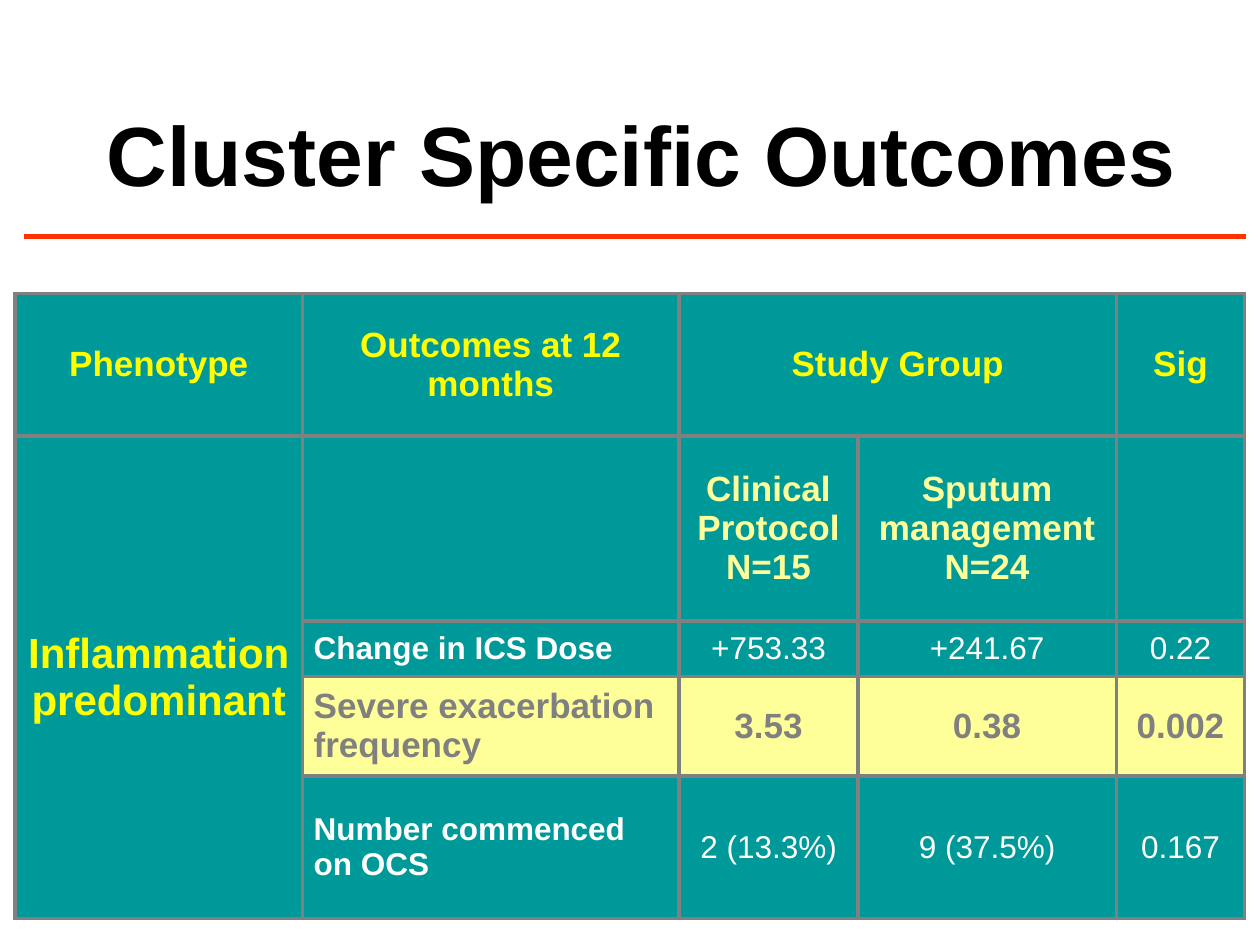
"""Build the Cluster Specific Outcomes slide."""
from lxml import etree
from pptx import Presentation
from pptx.dml.color import RGBColor
from pptx.enum.shapes import MSO_CONNECTOR
from pptx.enum.text import MSO_ANCHOR, PP_ALIGN
from pptx.oxml.ns import qn
from pptx.util import Inches, Pt

CENTER, LEFT = PP_ALIGN.CENTER, PP_ALIGN.LEFT
MIDDLE = MSO_ANCHOR.MIDDLE
STRAIGHT = MSO_CONNECTOR.STRAIGHT

FONT = "Arial"
TEAL, CREAM, YELLOW, GREY, WHITE = "009999", "FFFF99", "FFFF00", "808080", "FFFFFF"
TITLE = "Cluster Specific Outcomes"
COLS = [2.28, 2.99, 1.42, 2.05, 1.02]
ROWS = [1.13, 1.47, 0.44, 0.79, 1.13]
CELLS = [
    ["Phenotype", "Outcomes at 12 months", "Study Group", "", "Sig"],
    ["Inflammation predominant", "", "Clinical Protocol\nN=15", "Sputum management\nN=24", ""],
    ["", "Change in ICS Dose", "+753.33", "+241.67", "0.22"],
    ["", "Severe exacerbation frequency", "3.53", "0.38", "0.002"],
    ["", "Number commenced on OCS", "2 (13.3%)", "9 (37.5%)", "0.167"],
]
MERGES = [((0, 2), (0, 3)), ((1, 0), (4, 0))]
PLAIN_ROW = (18, WHITE, False, TEAL)
ROW_STYLES = [
    (20, YELLOW, True, TEAL),
    (20, CREAM, True, TEAL),
    PLAIN_ROW,
    (20, GREY, True, CREAM),
    PLAIN_ROW,
]


def rgb(color):
    return RGBColor.from_string(color)


def add_text(tf, text, size, color, bold, align):
    for i, line in enumerate(text.split("\n")):
        p = tf.add_paragraph() if i else tf.paragraphs[0]
        p.alignment = align
        r = p.add_run()
        r.text = line
        r.font.name, r.font.size, r.font.bold = FONT, Pt(size), bold
        r.font.color.rgb = rgb(color)


def add_borders(cell, color, width):
    pr = cell._tc.get_or_add_tcPr()
    for i, side in enumerate(("a:lnL", "a:lnR", "a:lnT", "a:lnB")):
        ln = etree.Element(qn(side), w=str(Pt(width)))
        fill = etree.SubElement(ln, qn("a:solidFill"))
        etree.SubElement(fill, qn("a:srgbClr"), val=color)
        pr.insert(i, ln)


def add_title(s):
    tf = s.shapes.add_textbox(Inches(0.18), Inches(0.82), Inches(9.82), Inches(0.79)).text_frame
    tf.word_wrap = True
    tf.vertical_anchor = MIDDLE
    add_text(tf, TITLE, 48, "000000", True, CENTER)


def add_rule(s):
    y = Inches(1.88)
    line = s.shapes.add_connector(STRAIGHT, Inches(0.19), y, Inches(9.89), y)
    line.line.color.rgb = rgb("FF3300")
    line.line.width = Pt(3)
    etree.SubElement(line._element.spPr, qn("a:effectLst"))


def add_outcomes(s):
    table = s.shapes.add_table(len(ROWS), len(COLS), Inches(0.12), Inches(2.33),
                               Inches(sum(COLS)), Inches(sum(ROWS))).table
    table.first_row = table.horz_banding = False
    for col, width in zip(table.columns, COLS):
        col.width = Inches(width)
    for row, height in zip(table.rows, ROWS):
        row.height = Inches(height)
    for start, end in MERGES:
        table.cell(*start).merge(table.cell(*end))
    for i, (texts, style) in enumerate(zip(CELLS, ROW_STYLES)):
        size, color, bold, fill = style
        for j, text in enumerate(texts):
            cell = table.cell(i, j)
            cell.fill.solid()
            cell.fill.fore_color.rgb = rgb(TEAL if j == 0 else fill)
            cell.vertical_anchor = MIDDLE
            cell.margin_left = cell.margin_right = Inches(0.09)
            add_borders(cell, GREY, 2.25)
            if not text:
                continue
            if (i, j) == (1, 0):
                add_text(cell.text_frame, text, 24, YELLOW, True, CENTER)
            else:
                label = i > 1 and j == 1
                add_text(cell.text_frame, text, size, color, bold or label,
                         LEFT if label else CENTER)


def main():
    prs = Presentation()
    prs.slide_width, prs.slide_height = Inches(10), Inches(7.5)
    s = prs.slides.add_slide(prs.slide_layouts[6])
    add_outcomes(s)
    add_title(s)
    add_rule(s)
    prs.save("out.pptx")


if __name__ == "__main__":
    main()
